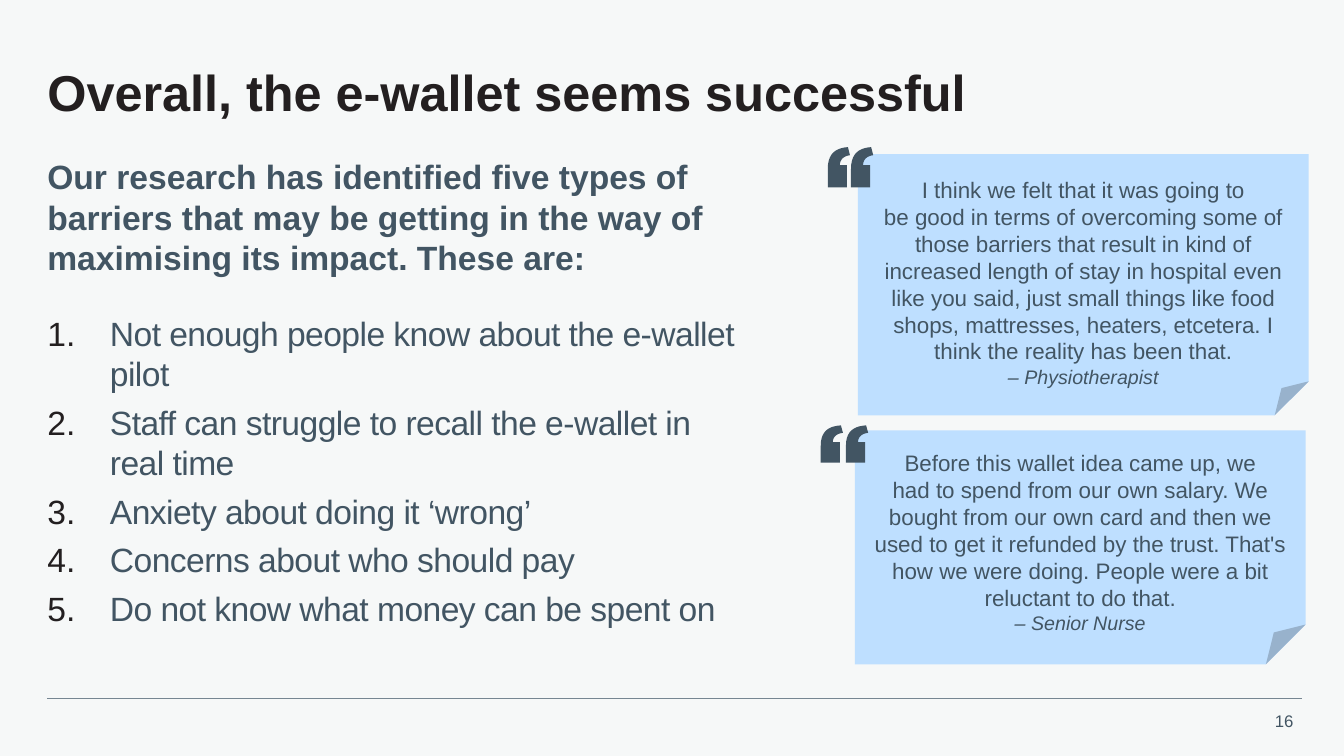
from dataclasses import dataclass

from lxml.etree import SubElement
from pptx import Presentation
from pptx.dml.color import RGBColor
from pptx.enum.shapes import MSO_CONNECTOR, MSO_SHAPE
from pptx.enum.text import MSO_ANCHOR, PP_ALIGN
from pptx.oxml.ns import qn
from pptx.util import Pt

EMU_PER_PX = 9144


@dataclass(frozen=True)
class Theme:
    font: str = "Arial"
    paper: str = "F6F8F8"
    ink: str = "231F20"
    slate: str = "425563"
    rule: str = "768692"
    card: str = "BEDFFF"
    title_size: int = 36
    body_size: int = 24
    quote_size: int = 16
    source_size: int = 14
    number_size: int = 12


def px(n):
    return round(n * EMU_PER_PX)


def curve(p0, p1, p2, p3, steps=10):
    """Points along a cubic Bezier, without its first point."""
    points = []
    for i in range(1, steps + 1):
        t = i / steps
        weights = ((1 - t) ** 3, 3 * t * (1 - t) ** 2, 3 * t * t * (1 - t), t ** 3)
        points.append(tuple(sum(w * q[axis] for w, q in zip(weights, (p0, p1, p2, p3)))
                            for axis in (0, 1)))
    return points


QUOTE_MARK = [(0, 22), *curve((0, 22), (0, 6), (8, 1), (20, 0)), (22, 8),
              *curve((22, 8), (15, 9), (12, 13), (12, 18)),
              (19, 18), (19, 40), (0, 40)]


class Deck:
    def __init__(self, theme, width, height):
        self.theme = theme
        self.prs = Presentation()
        self.prs.slide_width, self.prs.slide_height = px(width), px(height)
        self.s = self.prs.slides.add_slide(self.prs.slide_layouts[6])
        self.fill(self.s.background, theme.paper)

    def fill(self, target, color):
        target.fill.solid()
        target.fill.fore_color.rgb = RGBColor.from_string(color)

    def flat(self, sp, color):
        """Plain fill with no line and no shadow."""
        self.fill(sp, color)
        sp.line.fill.background()
        sp.shadow.inherit = False

    def style(self, p, size, color, bold=False, italic=False):
        for r in p.runs:
            r.font.name, r.font.size = self.theme.font, Pt(size)
            r.font.bold, r.font.italic = bold, italic
            r.font.color.rgb = RGBColor.from_string(color)

    def text(self, box, content, size, color, bold=False,
             align=PP_ALIGN.LEFT, anchor=MSO_ANCHOR.TOP):
        tf = self.s.shapes.add_textbox(*map(px, box)).text_frame
        tf.word_wrap, tf.vertical_anchor = True, anchor
        tf.margin_left = tf.margin_right = tf.margin_top = tf.margin_bottom = 0
        tf.text = content
        for p in tf.paragraphs:
            p.alignment = align
            self.style(p, size, color, bold)
        return tf

    def numbered(self, box, items, indent):
        t = self.theme
        tf = self.text(box, "\n".join(items), t.body_size, t.slate)
        for p in tf.paragraphs:
            p.space_after = Pt(6)
            pPr = p._p.get_or_add_pPr()
            pPr.set("marL", str(px(indent)))
            pPr.set("indent", str(-px(indent)))
            SubElement(SubElement(pPr, qn("a:buClr")), qn("a:srgbClr"), val=t.ink)
            SubElement(pPr, qn("a:buAutoNum"), type="arabicPeriod")
            for r in p.runs:
                r._r.get_or_add_rPr().set("spc", "-40")

    def rule(self, x1, x2, y):
        ln = self.s.shapes.add_connector(MSO_CONNECTOR.STRAIGHT, px(x1), px(y), px(x2), px(y))
        ln.line.color.rgb = RGBColor.from_string(self.theme.rule)
        ln.line.width = Pt(0.5)
        SubElement(ln._element.spPr, qn("a:effectLst"))

    def card(self, box, fold, top, lines, source):
        """Quote card; fold is the corner's share of the height."""
        t = self.theme
        sp = self.s.shapes.add_shape(MSO_SHAPE.FOLDED_CORNER, *map(px, box))
        guides = next(sp._element.spPr.iter(qn("a:avLst")))
        SubElement(guides, qn("a:gd"), name="adj", fmla=f"val {round(fold * 100000)}")
        self.flat(sp, t.card)
        tf = sp.text_frame
        tf.word_wrap, tf.vertical_anchor = True, MSO_ANCHOR.TOP
        tf.margin_top, tf.margin_bottom = px(top), 0
        tf.text = "\n".join([*lines, source])
        for p in tf.paragraphs:
            p.alignment = PP_ALIGN.CENTER
            self.style(p, t.quote_size, t.slate)
        self.style(tf.paragraphs[-1], t.source_size, t.slate, italic=True)

    def quote_marks(self, x, y, gap, height):
        stretch = height / 40
        for left in (x, x + gap):
            points = [(px(left + dx), px(y + dy * stretch)) for dx, dy in QUOTE_MARK]
            builder = self.s.shapes.build_freeform(*points[0])
            builder.add_line_segments(points[1:], close=True)
            self.flat(builder.convert_to_shape(), self.theme.slate)


def main():
    t = Theme()
    deck = Deck(t, 1333, 750)
    deck.text((1240, 705, 43, 20), "16", t.number_size, t.slate, align=PP_ALIGN.RIGHT)
    deck.rule(47, 1291, 693)
    title = deck.text((47, 47, 1247, 95), "Overall, the e-wallet seems successful",
                      t.title_size, t.ink, bold=True, anchor=MSO_ANCHOR.MIDDLE)
    title.paragraphs[0].line_spacing = 0.9
    deck.text((47, 155, 754, 142),
              "Our research has identified five types of barriers that may be "
              "getting in the way of maximising its impact. These are:",
              t.body_size, t.slate, bold=True)
    deck.numbered((47, 310, 698, 334), [
        "Not enough people know about the e-wallet pilot",
        "Staff can struggle to recall the e-wallet in real time",
        "Anxiety about doing it ‘wrong’",
        "Concerns about who should pay",
        "Do not know what money can be spent on",
    ], indent=62)

    deck.card((851, 153, 447, 259), 0.13, 22, [
        "I think we felt that it was going to",
        "be good in terms of overcoming some of those barriers that result in kind of "
        "increased length of stay in hospital even like you said, just small things like "
        "food shops, mattresses, heaters, etcetera. I think the reality has been that.",
    ], "– Physiotherapist")
    deck.quote_marks(821, 146, gap=23, height=40)

    deck.card((848, 427, 447, 232), 0.17, 19, [
        "Before this wallet idea came up, we",
        "had to spend from our own salary. We bought from our own card and then we used to "
        "get it refunded by the trust. That's how we were doing. People were a bit "
        "reluctant to do that.",
    ], "– Senior Nurse")
    deck.quote_marks(814, 422, gap=25, height=37)

    deck.prs.save("out.pptx")


if __name__ == "__main__":
    main()
